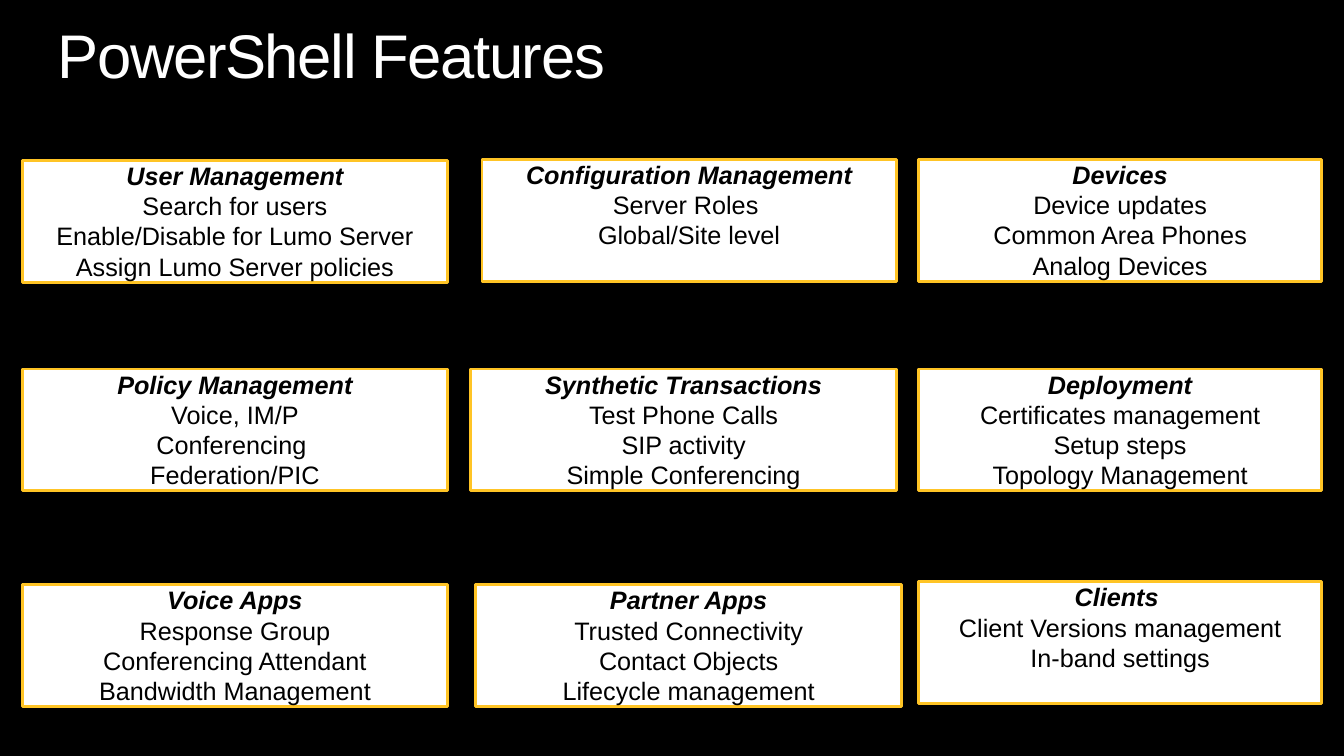
from dataclasses import dataclass

from pptx import Presentation
from pptx.dml.color import RGBColor
from pptx.enum.shapes import MSO_SHAPE
from pptx.enum.text import MSO_ANCHOR, PP_ALIGN
from pptx.util import Emu, Pt

PX = 9144  # EMU, 100 px to the inch
BLACK = RGBColor(0x00, 0x00, 0x00)
WHITE = RGBColor(0xFF, 0xFF, 0xFF)
GOLD = RGBColor(0xFF, 0xC4, 0x25)
FONT = "Arial"
BOX_HEIGHT = 121
LEFT_COL, RIGHT_COL = 22, 911
WIDE, RIGHT_WIDTH = 422, 400
TOP_ROW, MIDDLE_ROW, BOTTOM_ROW = 158, 366, 580


@dataclass(frozen=True)
class Feature:
    left: int
    top: int
    width: int
    heading: str
    items: tuple[str, ...]


FEATURES = (
    Feature(LEFT_COL, TOP_ROW + 1, WIDE, "User Management",
            ("Search for users", "Enable/Disable for Lumo Server",
             "Assign Lumo Server policies")),
    Feature(478, TOP_ROW, 411, "Configuration Management",
            ("Server Roles ", "Global/Site level")),
    Feature(RIGHT_COL, TOP_ROW, RIGHT_WIDTH, "Devices",
            ("Device updates", "Common Area Phones", "Analog Devices")),
    Feature(LEFT_COL, MIDDLE_ROW, WIDE, "Policy Management",
            ("Voice, IM/P", "Conferencing ", "Federation/PIC")),
    Feature(467, MIDDLE_ROW, WIDE, "Synthetic Transactions",
            ("Test Phone Calls", "SIP activity", "Simple Conferencing")),
    Feature(RIGHT_COL, MIDDLE_ROW, RIGHT_WIDTH, "Deployment",
            ("Certificates management", "Setup steps", "Topology Management")),
    Feature(LEFT_COL, BOTTOM_ROW, WIDE, "Voice Apps",
            ("Response Group", "Conferencing Attendant", "Bandwidth Management")),
    Feature(472, BOTTOM_ROW, WIDE, "Partner Apps",
            ("Trusted Connectivity", "Contact Objects", "Lifecycle management")),
    Feature(RIGHT_COL, BOTTOM_ROW - 3, RIGHT_WIDTH, "Clients ",
            ("Client Versions management", "In-band settings")),
)


def px(n: int) -> Emu:
    return Emu(n * PX)


def prepare_frame(tf) -> None:
    """Wrap the text, anchor it at the top and remove the insets."""
    tf.word_wrap = True
    tf.vertical_anchor = MSO_ANCHOR.TOP
    tf.margin_left = tf.margin_top = tf.margin_right = tf.margin_bottom = 0


def style_run(r, size: int, color: RGBColor, emphasis: bool = False) -> None:
    """Set the font; emphasis means bold italic."""
    r.font.name = FONT
    r.font.size = Pt(size)
    r.font.color.rgb = color
    r.font.bold = r.font.italic = emphasis


def add_title(slide, text: str) -> None:
    sp = slide.shapes.add_textbox(px(57), px(25), px(1200), px(73))
    tf = sp.text_frame
    prepare_frame(tf)
    tf.text = text
    p = tf.paragraphs[0]
    p.line_spacing = 0.9
    r = p.runs[0]
    style_run(r, 44, WHITE)
    r.font._element.set("spc", "-100")


def add_feature(slide, feature: Feature) -> None:
    sp = slide.shapes.add_shape(MSO_SHAPE.RECTANGLE, px(feature.left), px(feature.top),
                                px(feature.width), px(BOX_HEIGHT))
    sp.shadow.inherit = False
    sp.fill.solid()
    sp.fill.fore_color.rgb = WHITE
    sp.line.color.rgb = GOLD
    sp.line.width = Pt(2)
    tf = sp.text_frame
    prepare_frame(tf)
    tf.text = "\n".join((feature.heading, *feature.items))
    for i, p in enumerate(tf.paragraphs):
        p.alignment = PP_ALIGN.CENTER
        style_run(p.runs[0], 18, BLACK, emphasis=i == 0)


def main() -> None:
    prs = Presentation()
    prs.slide_width, prs.slide_height = px(1333), px(750)
    slide = prs.slides.add_slide(prs.slide_layouts[6])
    slide.background.fill.solid()
    slide.background.fill.fore_color.rgb = BLACK
    add_title(slide, "PowerShell Features")
    for feature in FEATURES:
        add_feature(slide, feature)
    prs.save("out.pptx")


if __name__ == "__main__":
    main()
